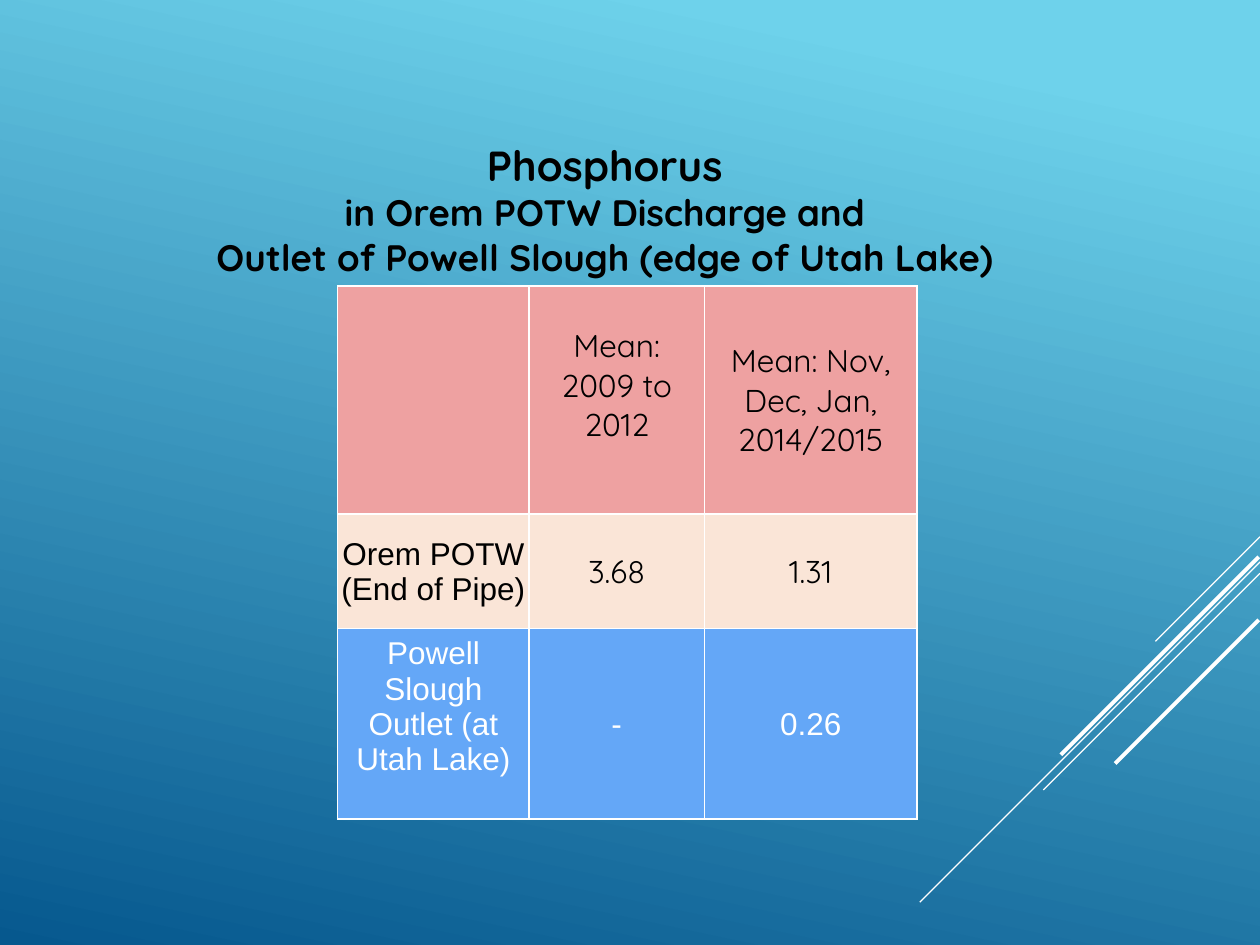
from lxml import etree
from pptx import Presentation
from pptx.dml.color import RGBColor
from pptx.enum.shapes import MSO_CONNECTOR
from pptx.enum.text import MSO_ANCHOR, MSO_AUTO_SIZE, PP_ALIGN
from pptx.oxml.ns import qn
from pptx.util import Inches, Pt

STRAIGHT = MSO_CONNECTOR.STRAIGHT
TOP, MIDDLE = MSO_ANCHOR.TOP, MSO_ANCHOR.MIDDLE
CENTER = PP_ALIGN.CENTER
NO_AUTOFIT = MSO_AUTO_SIZE.NONE
TITLE_ONLY = 5
WHITE, BLACK = "FFFFFF", "000000"
HEADING_FONT, PLAIN_FONT = "Quicksand", "Arial"

TITLE_LINES = [
    ("Phosphorus", 24),
    ("in Orem POTW Discharge and", 21),
    ("Outlet of Powell Slough (edge of Utah Lake)", 21),
]
COLUMN_WIDTHS = [1.52, 1.39, 1.69]
ROWS = [
    (1.81, "EEA1A1", BLACK, [
        ("", HEADING_FONT, 0),
        ("Mean:\v2009 to 2012", HEADING_FONT, 0.24),
        ("Mean: Nov, Dec, Jan, 2014/2015", HEADING_FONT, 0)]),
    (0.91, "FAE5D7", BLACK, [
        ("Orem POTW (End of Pipe)", PLAIN_FONT, 0),
        ("3.68", HEADING_FONT, 0),
        ("1.31", HEADING_FONT, 0)]),
    (1.51, "64A7F7", WHITE, [
        ("Powell Slough Outlet (at Utah Lake)", PLAIN_FONT, 0.28),
        ("-", PLAIN_FONT, 0),
        ("0.26", PLAIN_FONT, 0)]),
]
DIAGONALS = [
    (2.7, 0, 0.83, 0.75),
    (2.7, 0.2, 2.7, 0.75),
    (2.7, 0.29, 1.72, 0.75),
    (2.69, 0.16, 1.57, 2.25),
    (2.69, 0.66, 1.14, 2.25),
]


def color(value):
    return RGBColor.from_string(value)


def style_font(paragraph, face, size, tint, bold=False):
    paragraph.alignment = CENTER
    font = paragraph.font
    font.name, font.size, font.bold = face, Pt(size), bold
    font.color.rgb = color(tint)


def paint_background(slide):
    fill = slide.background.fill
    fill.gradient()
    fill.gradient_angle = 360 - 102
    for stop, (position, tint) in zip(fill.gradient_stops, [(0.1, "6ED2EB"), (1, "06588E")]):
        stop.position = position
        stop.color.rgb = color(tint)


def add_diagonals(slide, left, top):
    group = slide.shapes.add_group_shape()
    for right, upper, run, weight in DIAGONALS:
        x, y = left + right, top + upper
        diagonal = group.shapes.add_connector(
            STRAIGHT, Inches(x), Inches(y), Inches(x - run), Inches(y + run))
        diagonal.line.color.rgb = color(WHITE)
        diagonal.line.width = Pt(weight)
        etree.SubElement(diagonal.element.spPr, qn("a:effectLst"))


def place_title(slide, left, top, width, height):
    title = slide.shapes.title
    title.left, title.top, title.width, title.height = map(Inches, (left, top, width, height))
    frame = title.text_frame
    frame.auto_size = NO_AUTOFIT
    frame.word_wrap = True
    frame.vertical_anchor = TOP
    frame.text = "\n".join(wording for wording, size in TITLE_LINES)
    for paragraph, (wording, size) in zip(frame.paragraphs, TITLE_LINES):
        style_font(paragraph, HEADING_FONT, size, BLACK, bold=True)


def add_borders(cell):
    properties = cell._tc.get_or_add_tcPr()
    for index, side in enumerate(("lnL", "lnR", "lnT", "lnB")):
        border = etree.Element(qn(f"a:{side}"), w=str(Pt(1)))
        fill = etree.SubElement(border, qn("a:solidFill"))
        etree.SubElement(fill, qn("a:srgbClr"), val=WHITE)
        properties.insert(index, border)


def fill_cell(cell, wording, face, bottom, background, tint):
    cell.fill.solid()
    cell.fill.fore_color.rgb = color(background)
    cell.vertical_anchor = MIDDLE
    cell.margin_left = cell.margin_right = cell.margin_top = Inches(0.01)
    cell.margin_bottom = Inches(bottom)
    cell.text = wording
    style_font(cell.text_frame.paragraphs[0], face, 18, tint)
    add_borders(cell)


def add_phosphorus_table(slide, left, top):
    height = sum(row[0] for row in ROWS)
    table = slide.shapes.add_table(
        len(ROWS), len(COLUMN_WIDTHS), Inches(left), Inches(top),
        Inches(sum(COLUMN_WIDTHS)), Inches(height)).table
    table.first_row = table.horz_banding = False
    for column, width in zip(table.columns, COLUMN_WIDTHS):
        column.width = Inches(width)
    for row, (row_height, background, tint, entries) in zip(table.rows, ROWS):
        row.height = Inches(row_height)
        for cell, (wording, face, bottom) in zip(row.cells, entries):
            fill_cell(cell, wording, face, bottom, background, tint)


def main():
    presentation = Presentation()
    presentation.slide_width, presentation.slide_height = Inches(10), Inches(7.5)
    slide = presentation.slides.add_slide(presentation.slide_layouts[TITLE_ONLY])
    paint_background(slide)
    add_diagonals(slide, 7.3, 4.26)
    add_phosphorus_table(slide, 2.68, 2.27)
    place_title(slide, 1.23, 1.06, 7.14, 1.21)
    presentation.save("out.pptx")


if __name__ == "__main__":
    main()
